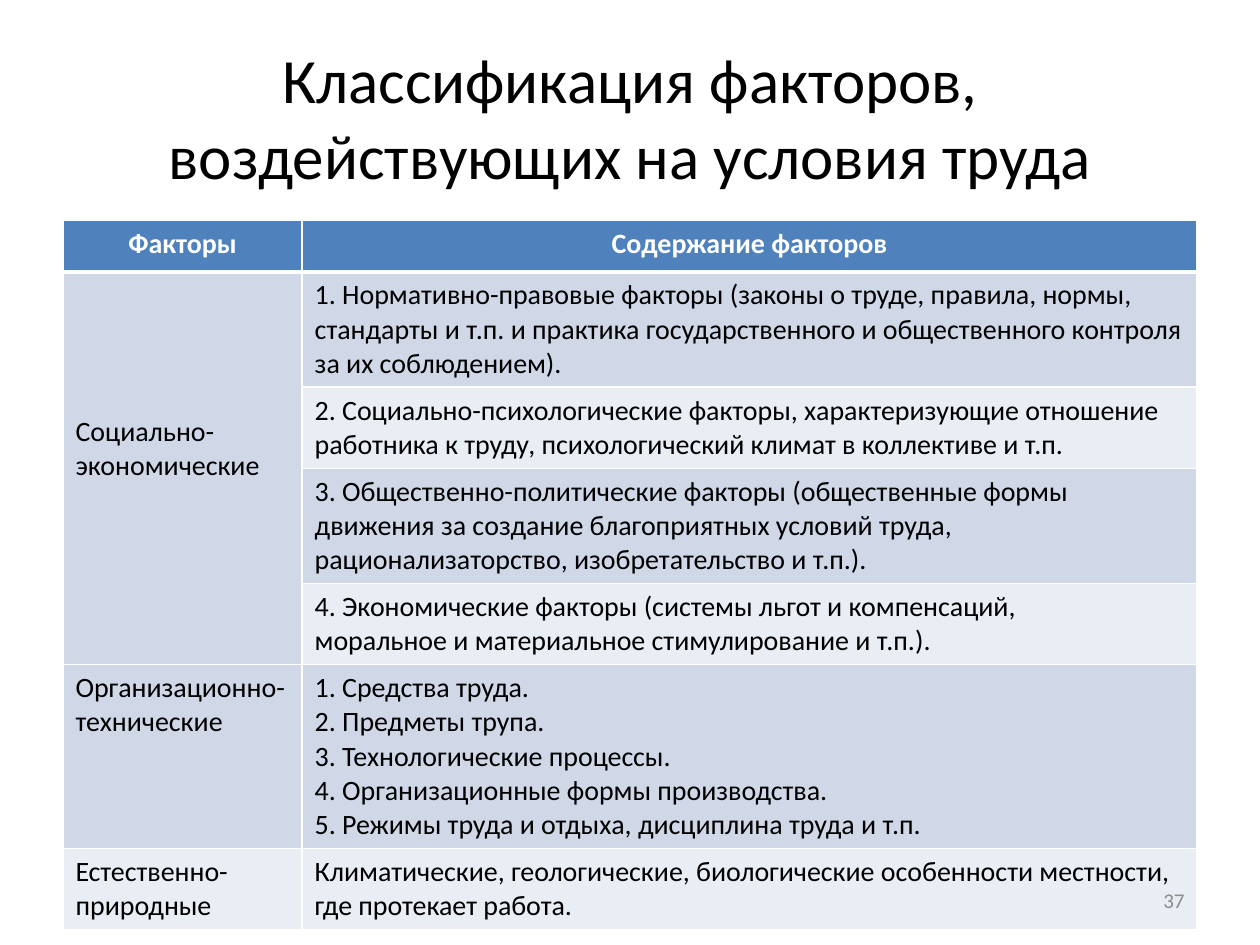
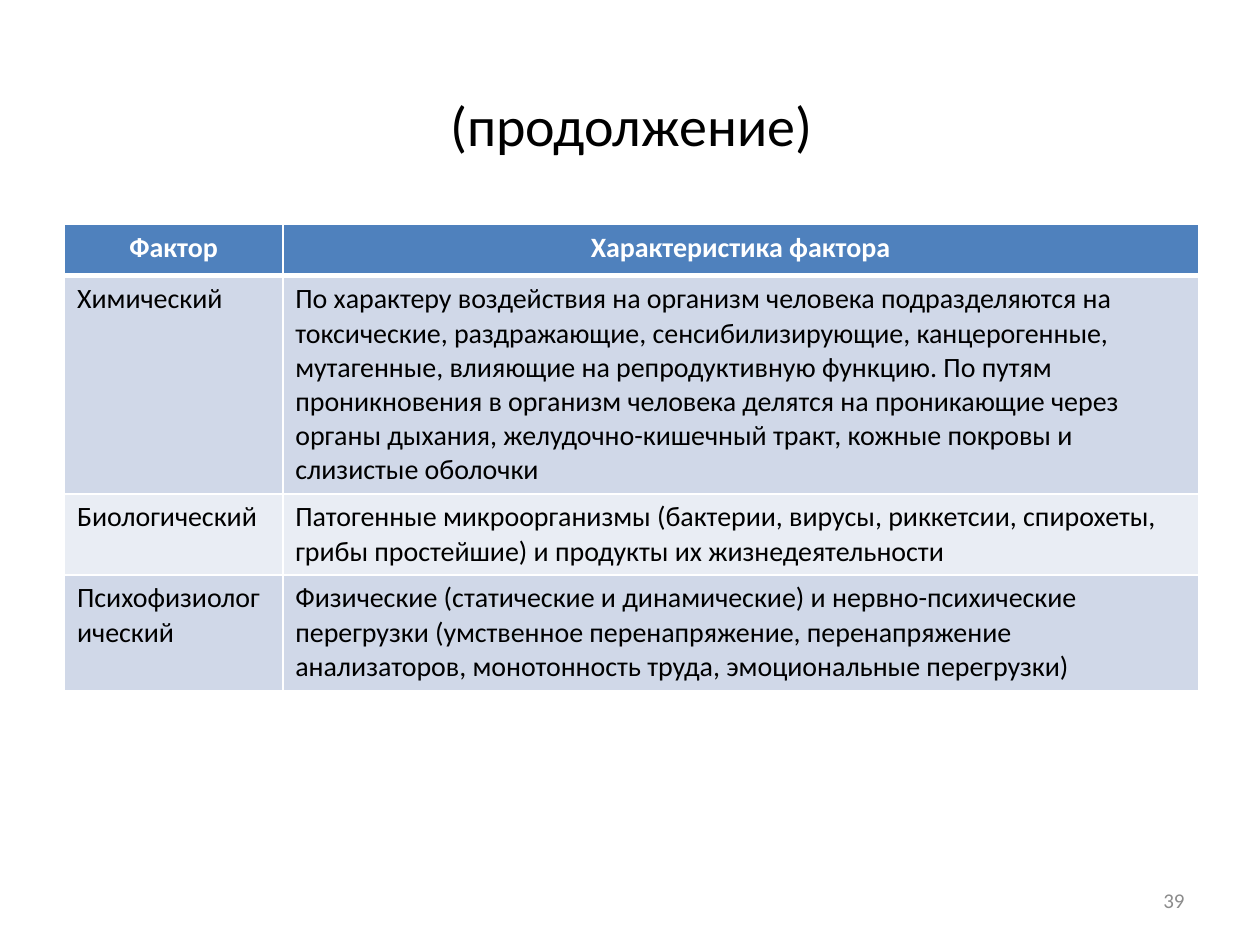
from lxml import etree
from pptx import Presentation
from pptx.dml.color import RGBColor
from pptx.enum.text import MSO_ANCHOR, MSO_AUTO_SIZE, PP_ALIGN
from pptx.oxml.ns import qn
from pptx.util import Cm, Pt

LEFT, CENTER, RIGHT = PP_ALIGN.LEFT, PP_ALIGN.CENTER, PP_ALIGN.RIGHT
MIDDLE = MSO_ANCHOR.MIDDLE
FIXED = MSO_AUTO_SIZE.NONE
FONT = "Calibri"
COLORS = {
    "head": "4F81BD",
    "odd": "D0D8E8",
    "even": "E9EDF4",
    "white": "FFFFFF",
    "black": "000000",
    "gray": "8C8C8C",
}
LINE, PAD = 0.69, 0.25
HEAD_H = 1.03
WIDTH = 22.86

FACTORS = [
    ("Факторы", "Содержание факторов", 1),
    ("Социально-экономические",
     "1. Нормативно-правовые факторы (законы о труде, правила, нормы, стандарты и т.п. "
     "и практика государственного и общественного контроля за их соблюдением).", 3),
    ("", "2. Социально-психологические факторы, характеризующие отношение работника к труду, "
     "психологический климат в коллективе и т.п.", 2),
    ("", "3. Общественно-политические факторы (общественные формы\n"
     "движения за создание благоприятных условий труда,\n"
     "рационализаторство, изобретательство и т.п.).", 3),
    ("", "4. Экономические факторы (системы льгот и компенсаций,\n"
     "моральное и материальное стимулирование и т.п.).", 2),
    ("Организационно-технические",
     "1. Средства труда.\n2. Предметы трупа.\n3. Технологические процессы.\n"
     "4. Организационные формы производства.\n"
     "5. Режимы труда и отдыха, дисциплина труда и т.п.", 5),
    ("Естественно-природные",
     "Климатические, геологические, биологические особенности местности, "
     "где протекает работа.", 2),
]
TRAITS = [
    ("Фактор", "Характеристика фактора", 1),
    ("Химический",
     "По характеру воздействия на организм человека подразделяются на токсические, "
     "раздражающие, сенсибилизирующие, канцерогенные, мутагенные, влияющие на "
     "репродуктивную функцию. По путям проникновения в организм человека делятся на "
     "проникающие через органы дыхания, желудочно-кишечный тракт, кожные покровы и "
     "слизистые оболочки", 6),
    ("Биологический",
     "Патогенные микроорганизмы (бактерии, вирусы, риккетсии, спирохеты, грибы простейшие) "
     "и продукты их жизнедеятельности", 2),
    ("Психофизиологический",
     "Физические (статические и динамические) и нервно-психические перегрузки (умственное "
     "перенапряжение, перенапряжение анализаторов, монотонность труда, "
     "эмоциональные перегрузки)", 3),
]


def write(frame, text, size=16, color="black", bold=False, align=LEFT):
    frame.word_wrap = True
    for i, part in enumerate(text.split("\n")):
        para = frame.paragraphs[0] if i == 0 else frame.add_paragraph()
        para.alignment = align
        run = para.add_run()
        run.text = part
        font = run.font
        font.name, font.size, font.bold = FONT, Pt(size), bold
        font.color.rgb = RGBColor.from_string(COLORS[color])


def add_title(slide, text, left, top, height, size):
    title = slide.shapes.title
    title.left, title.top = Cm(left), Cm(top)
    title.width, title.height = Cm(WIDTH), Cm(height)
    frame = title.text_frame
    frame.auto_size = FIXED
    frame.vertical_anchor = MIDDLE
    write(frame, text, size=size, align=CENTER)


def add_number(slide, number):
    box = slide.shapes.add_textbox(Cm(18.2), Cm(17.65), Cm(5.93), Cm(1.01))
    box.text_frame.vertical_anchor = MIDDLE
    write(box.text_frame, str(number), size=12, color="gray", align=RIGHT)


def add_borders(cell, row):
    props = cell._tc.get_or_add_tcPr()
    widths = {"lnL": 1, "lnR": 1, "lnT": 3 if row == 1 else 1, "lnB": 3 if row == 0 else 1}
    for tag, width in widths.items():
        line = etree.SubElement(props, qn("a:" + tag), w=str(Pt(width)))
        fill = etree.SubElement(line, qn("a:solidFill"))
        etree.SubElement(fill, qn("a:srgbClr"), val=COLORS["white"])


def add_table(slide, rows, left, top, first):
    heights = [HEAD_H] + [LINE * count + PAD for _, _, count in rows[1:]]
    shape = slide.shapes.add_table(len(rows), 2, Cm(left), Cm(top), Cm(WIDTH), Cm(sum(heights)))
    table = shape.table
    table.first_row = table.horz_banding = False
    for col, width in zip(table.columns, (first, WIDTH - first)):
        col.width = Cm(width)
    for r, (name, text, _) in enumerate(rows):
        table.rows[r].height = Cm(heights[r])
        tone = "head" if r == 0 else "odd" if r % 2 else "even"
        style = dict(color="white", bold=True, align=CENTER) if r == 0 else {}
        for c, part in enumerate((name, text)):
            cell = table.cell(r, c)
            add_borders(cell, r)
            cell.fill.solid()
            cell.fill.fore_color.rgb = RGBColor.from_string(COLORS[tone])
            if part:
                write(cell.text_frame, part, **style)
    return table


def main():
    deck = Presentation()
    deck.slide_width, deck.slide_height = Cm(25.4), Cm(19.05)
    layout = deck.slide_layouts[5]

    slide = deck.slides.add_slide(layout)
    add_title(slide, "Классификация факторов, воздействующих на условия труда", 1.27, 0.76, 3.18, 36)
    table = add_table(slide, FACTORS, 1.27, 4.45, 4.82)
    group = table.cell(1, 0)
    group.merge(table.cell(4, 0))
    group.margin_top = Cm(4 * LINE + PAD / 2)
    add_number(slide, 37)

    slide = deck.slides.add_slide(layout)
    add_title(slide, "(продолжение)", 1.3, 1.52, 1.96, 32)
    add_table(slide, TRAITS, 1.3, 4.53, 4.4)
    add_number(slide, 39)

    deck.save("out.pptx")


if __name__ == "__main__":
    main()
